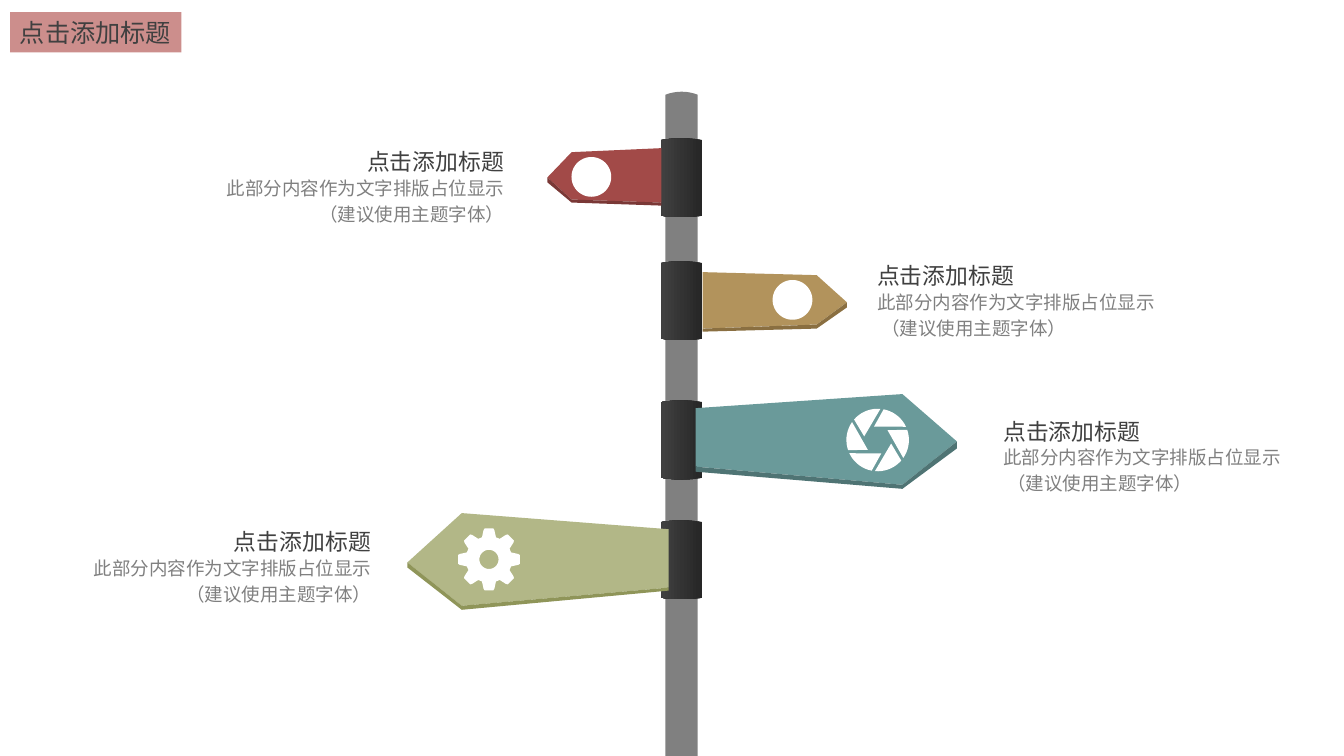
from math import cos, radians, sin

from lxml.etree import SubElement
from pptx import Presentation
from pptx.dml.color import RGBColor
from pptx.enum.shapes import MSO_SHAPE
from pptx.enum.text import MSO_ANCHOR, PP_ALIGN
from pptx.oxml.ns import qn
from pptx.util import Inches, Pt

THEME = {
    "font": "Noto Sans CJK SC",
    "title": {"size": Pt(18), "color": "404040"},
    "heading": {"size": Pt(16.3), "color": "404040"},
    "body": {"size": Pt(13.2), "color": "808080"},
    "banner": "CC8E8C",
    "pole": "808080",
    "collar": ("262626", "404040"),
    "icon": "FFFFFF",
    "red": ("A24A48", "7A3836"),
    "gold": ("B2935C", "8A6F41"),
    "teal": ("6A9A9A", "4F7474"),
    "green": ("B2B787", "8F9559"),
}
COLUMNS, ROWS = 1333, 750

presentation = Presentation()
presentation.slide_width = Inches(13.33)
presentation.slide_height = Inches(7.5)
column = presentation.slide_width / COLUMNS
row = presentation.slide_height / ROWS
slide = presentation.slides.add_slide(presentation.slide_layouts[6])


def draw(outlines, color):
    builder = None
    for outline in outlines:
        points = [(x * column, y * row) for x, y in outline]
        if builder is None:
            builder = slide.shapes.build_freeform(*points[0])
        else:
            builder.move_to(*points[0])
        builder.add_line_segments(points[1:], close=True)
    shape = builder.convert_to_shape()
    shape.shadow.inherit = False
    shape.line.fill.background()
    shape.fill.solid()
    shape.fill.fore_color.rgb = RGBColor.from_string(color)
    return shape


def around(center, polar_points):
    return [(center[0] + radius * sin(radians(angle)),
             center[1] - radius * cos(radians(angle)))
            for angle, radius in polar_points]


steps = [step / 12 for step in range(13)]
pole_left, pole_width, pole_top = 660, 32, 94
pole_cap = [(pole_left + pole_width * t, pole_top - 12 * t * (1 - t)) for t in steps]
draw([pole_cap + [(pole_left + pole_width, ROWS), (pole_left, ROWS)]], THEME["pole"])

collar_left, collar_width, collar_height = 656, 41, 75
for collar_top in (139, 261, 399, 518):
    upper = [(collar_left + collar_width * t, collar_top - 7 * t * (1 - t)) for t in steps]
    lower = [(x, 2 * collar_top + collar_height - y) for x, y in reversed(upper)]
    collar = draw([upper + lower], THEME["collar"][0])
    collar.fill.gradient()
    collar.fill.gradient_angle = 180
    for stop, color in zip(collar.fill.gradient_stops, THEME["collar"]):
        stop.color.rgb = RGBColor.from_string(color)

signs = [
    ("red", (656, 567, 543), (147, 151, 176, 198, 201), (5, 3, 3)),
    ("gold", (697, 810, 840), (270, 273, 300, 322, 326), (5, 4, 3)),
    ("teal", (690, 895, 949), (405, 391, 438, 481, 463), (7, 4, 5)),
    ("green", (663, 458, 404), (525, 509, 558, 601, 583), (5, 4, 3)),
]
for name, (root, shoulder, tip), heights, drops in signs:
    face = list(zip((root, shoulder, tip, shoulder, root), heights))
    rim = face[2:]
    dropped = [(x, y + drop) for (x, y), drop in zip(rim, drops)]
    face_color, rim_color = THEME[name]
    draw([face], face_color)
    draw([rim + dropped[::-1]], rim_color)

for center in ((586.5, 175.5), (786, 297.5)):
    draw([around(center, [(angle, 19.7) for angle in range(0, 360, 6)])], THEME["icon"])

gear_center = (485, 555)
tooth = [(-17.5, 23), (-10.5, 29.5), (-8, 31), (8, 31), (10.5, 29.5), (17.5, 23)]
teeth = [(turn + angle, radius) for turn in range(0, 360, 45) for angle, radius in tooth]
hub = [(angle, 9.5) for angle in range(360, 0, -10)]
draw([around(gear_center, teeth), around(gear_center, hub)], THEME["icon"])

blade = [(5 - 6 * step, 31) for step in range(10)] + [(-75, 13.8)]
draw([around((870.5, 436.5), [(turn + angle, radius) for angle, radius in blade])
      for turn in range(0, 360, 60)], THEME["icon"])

banner = slide.shapes.add_shape(MSO_SHAPE.RECTANGLE, int(10 * column), int(12 * row),
                                int(170 * column), int(40 * row))
banner.shadow.inherit = False
banner.line.fill.background()
banner.fill.solid()
banner.fill.fore_color.rgb = RGBColor.from_string(THEME["banner"])
banner_frame = {"word_wrap": False, "vertical_anchor": MSO_ANCHOR.MIDDLE}
texts = [(banner, "title", ["点击添加标题"], banner_frame, {"alignment": PP_ALIGN.LEFT})]

caption_frame = {"word_wrap": True, "margin_left": 0, "margin_right": 0,
                 "margin_top": 0, "margin_bottom": 0}
captions = [(214, 147, PP_ALIGN.RIGHT), (82, 524, PP_ALIGN.RIGHT),
            (870, 260, PP_ALIGN.LEFT), (995, 414, PP_ALIGN.LEFT)]
caption_parts = [
    ("heading", 0, 24, 1.0, ["点击添加标题"]),
    ("body", 24, 63, 1.2, ["此部分内容作为文字排版占位显示", " （建议使用主题字体）"]),
]
for left, top, alignment in captions:
    for style, offset, height, spacing, lines in caption_parts:
        box = slide.shapes.add_textbox(int(left * column), int((top + offset) * row),
                                       int(286 * column), int(height * row))
        texts.append((box, style, lines, caption_frame,
                      {"alignment": alignment, "line_spacing": spacing}))

for shape, style, lines, frame_format, paragraph_format in texts:
    paragraph = shape.text_frame.paragraphs[0]
    for target, values in ((shape.text_frame, frame_format), (paragraph, paragraph_format)):
        for attribute, value in values.items():
            setattr(target, attribute, value)
    for index, line in enumerate(lines):
        if index:
            paragraph.add_line_break()
        run = paragraph.add_run()
        run.text = line
        run.font.size = THEME[style]["size"]
        run.font.color.rgb = RGBColor.from_string(THEME[style]["color"])
        run.font.name = THEME["font"]
        SubElement(run.font._element, qn("a:ea")).set("typeface", THEME["font"])

presentation.save("out.pptx")
